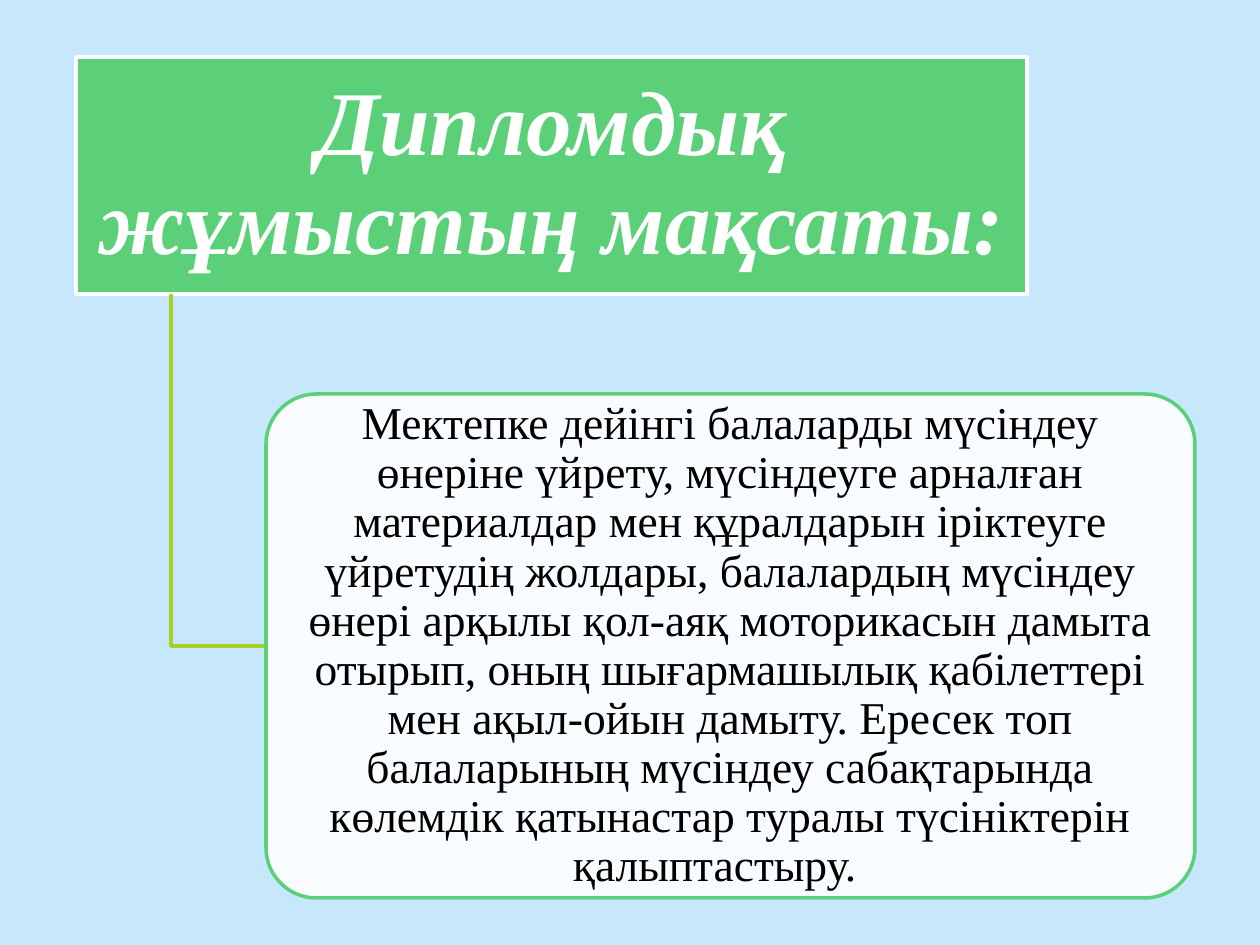
from pptx import Presentation
from pptx.dml.color import RGBColor
from pptx.enum.shapes import MSO_SHAPE as Shp
from pptx.enum.text import MSO_ANCHOR as Anchor, MSO_AUTO_SIZE as AutoSize, PP_ALIGN as Align
from pptx.oxml import parse_xml
from pptx.oxml.ns import nsdecls, qn
from pptx.util import Emu, Pt
from lxml.etree import SubElement

EMU_PER_PX = 914400 / 126
ROUNDING = 0.1
TITLE = "Дипломдық жұмыстың мақсаты:"
GOAL = (
    "Мектепке дейінгі балаларды мүсіндеу өнеріне үйрету, мүсіндеуге арналған "
    "материалдар мен құралдарын іріктеуге үйретудің жолдары, балалардың мүсіндеу "
    "өнері арқылы қол-аяқ моторикасын дамыта отырып, оның шығармашылық қабілеттері "
    "мен ақыл-ойын дамыту. Ересек топ балаларының мүсіндеу сабақтарында көлемдік "
    "қатынастар туралы түсініктерін қалыптастыру.\t"
)


def px(n):
    return Emu(round(n * EMU_PER_PX))


def rgb(code):
    return RGBColor.from_string(code)


class Deck:
    FONT = "Times New Roman"
    SKY, GREEN, LIME = "C6E7FC", "5BD078", "A5D028"
    WHITE, BLACK = "FFFFFF", "000000"
    LINE = Pt(2)

    def __init__(self, width, height):
        self.prs = Presentation()
        self.prs.slide_width, self.prs.slide_height = px(width), px(height)

    def add_slide(self):
        self.s = self.prs.slides.add_slide(self.prs.slide_layouts[5])
        fill = self.s.background.fill
        fill.solid()
        fill.fore_color.rgb = rgb(self.SKY)

    def paint(self, sp, fill, line):
        sp.fill.solid()
        sp.fill.fore_color.rgb = rgb(fill)
        sp.line.color.rgb = rgb(line)
        sp.line.width = self.LINE

    def set_text(self, sp, text, size, color, inset_x, inset_y, strong=False):
        tf = sp.text_frame
        tf.text = text
        tf.word_wrap = True
        tf.auto_size = AutoSize.NONE
        tf.vertical_anchor = Anchor.MIDDLE
        tf.margin_left = tf.margin_right = px(inset_x)
        tf.margin_top = tf.margin_bottom = px(inset_y)
        p = tf.paragraphs[0]
        p.alignment = Align.CENTER
        p.line_spacing = 0.9
        font = p.runs[0].font
        font.name, font.size = self.FONT, Pt(size)
        font.bold = font.italic = strong
        font.color.rgb = rgb(color)

    def title_box(self, text, x, y, w, h):
        sp = self.s.shapes.title
        sp.left, sp.top, sp.width, sp.height = map(px, (x, y, w, h))
        # Round the placeholder's corners
        sp.element.spPr.append(parse_xml(
            f'<a:prstGeom {nsdecls("a")} prst="roundRect"><a:avLst>'
            f'<a:gd name="adj" fmla="val {round(ROUNDING * 100000)}"/>'
            '</a:avLst></a:prstGeom>'))
        self.paint(sp, self.GREEN, self.WHITE)
        self.set_text(sp, text, 52, self.WHITE, 14, 9, strong=True)

    def text_box(self, text, x, y, w, h, opacity):
        sp = self.s.shapes.add_shape(Shp.ROUNDED_RECTANGLE, *map(px, (x, y, w, h)))
        sp.adjustments[0] = ROUNDING
        sp.shadow.inherit = False
        self.paint(sp, self.WHITE, self.GREEN)
        color = sp.element.spPr.find(qn("a:solidFill"))[0]
        SubElement(color, qn("a:alpha")).set("val", str(opacity * 1000))
        self.set_text(sp, text, 26, self.BLACK, 6, 5)

    def elbow(self, *points):
        builder = self.s.shapes.build_freeform(*points[0], scale=EMU_PER_PX)
        builder.add_line_segments(points[1:], close=False)
        sp = builder.convert_to_shape()
        sp.shadow.inherit = False
        sp.fill.background()
        sp.line.color.rgb = rgb(self.LIME)
        sp.line.width = self.LINE


def main():
    deck = Deck(1260, 945)
    deck.add_slide()

    # Heading
    x, y, w, h = 76, 57, 951, 237
    deck.title_box(TITLE, x, y, w, h)

    # Branch from the heading to the middle of the goal box
    goal_x, goal_y, goal_w, goal_h = 266, 394, 929, 504
    stem_x, middle = x + w // 10, goal_y + goal_h // 2
    deck.elbow((stem_x, y + h), (stem_x, middle), (goal_x, middle))

    # Goal
    deck.text_box(GOAL, goal_x, goal_y, goal_w, goal_h, opacity=90)

    deck.prs.save("out.pptx")


if __name__ == "__main__":
    main()
